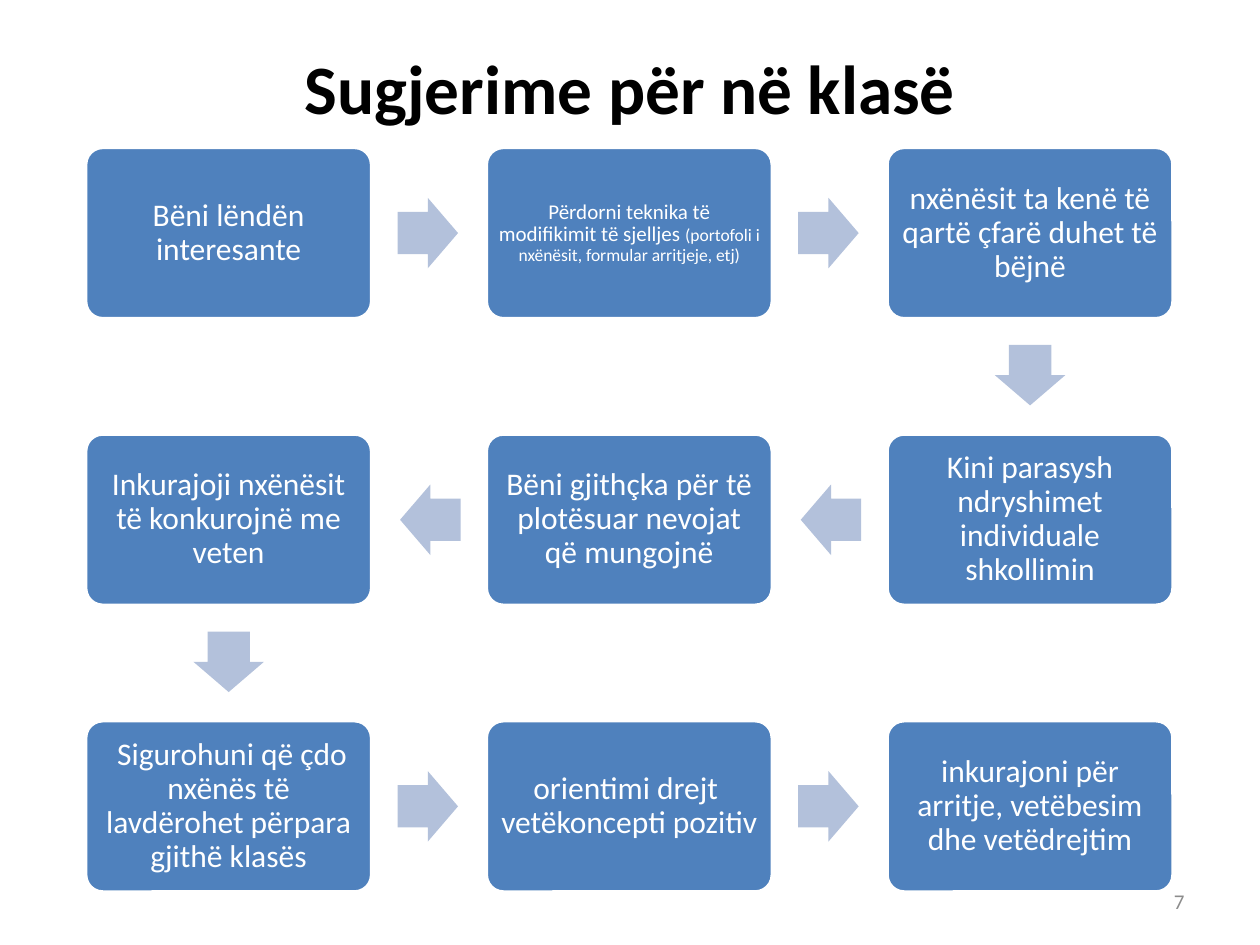
import pptx
import pptx.util
import pptx.dml.color
import pptx.enum.shapes
import pptx.enum.text

Inches = pptx.util.Inches
Pt = pptx.util.Pt
SHAPE = pptx.enum.shapes.MSO_SHAPE
ALIGN = pptx.enum.text.PP_ALIGN
FONT = "Calibri"
COLORS = {"box": "4F81BD", "arrow": "B3C1DB", "light": "FFFFFF",
          "title": "000000", "number": "8C8C8C"}

TITLE = "Sugjerime për në klasë"
NUMBER = "7"
STEPS = [
    [("Bëni lëndën interesante", 18)],
    [("Përdorni teknika të modifikimit të sjelljes ", 12),
     ("(portofoli i nxënësit, formular arritjeje, etj)", 10)],
    [("nxënësit ta kenë të qartë çfarë duhet të bëjnë", 18)],
    [("Kini parasysh ndryshimet individuale shkollimin", 18)],
    [("Bëni gjithçka për të plotësuar nevojat që mungojnë", 18)],
    [("Inkurajoji nxënësit të konkurojnë me veten", 18)],
    [(" Sigurohuni që çdo nxënës të lavdërohet përpara gjithë klasës", 18)],
    [("orientimi drejt  vetëkoncepti pozitiv", 18)],
    [("inkurajoni për arritje, vetëbesim dhe vetëdrejtim", 18)],
]

COLS = 3
LEFT, TOP = 0.68, 1.17
BOX_W, BOX_H = 2.27, 1.36
STEP_X, STEP_Y = 3.18, 2.275
ARROW_W, ARROW_H = 0.48, 0.56
ARROW_SHIFT = 0.01


def rgb(name):
    return pptx.dml.color.RGBColor.from_string(COLORS[name])


def write(sp, runs, color, align, bold=False):
    tf = sp.text_frame
    tf.word_wrap = True
    tf.vertical_anchor = pptx.enum.text.MSO_ANCHOR.MIDDLE
    p = tf.paragraphs[0]
    p.alignment = align
    for text, size in runs:
        r = p.add_run()
        r.text = text
        r.font.name = FONT
        r.font.size = Pt(size)
        r.font.bold = bold
        r.font.color.rgb = rgb(color)
    return p


def add_text(slide, box, text, size, color, align, bold=False):
    sp = slide.shapes.add_textbox(*map(Inches, box))
    write(sp, [(text, size)], color, align, bold)


def add_shape(slide, kind, cx, cy, w, h, fill, adjustments):
    sp = slide.shapes.add_shape(
        kind, Inches(cx - w / 2), Inches(cy - h / 2), Inches(w), Inches(h))
    sp.shadow.inherit = False
    sp.fill.solid()
    sp.fill.fore_color.rgb = rgb(fill)
    sp.line.fill.background()
    for i, value in enumerate(adjustments):
        sp.adjustments[i] = value
    return sp


def center(index):
    row, col = divmod(index, COLS)
    if row % 2:
        col = COLS - 1 - col
    return LEFT + col * STEP_X + BOX_W / 2, TOP + row * STEP_Y + BOX_H / 2


def add_step(slide, index, runs):
    sp = add_shape(slide, SHAPE.ROUNDED_RECTANGLE, *center(index),
                   BOX_W, BOX_H, "box", [0.1])
    sp.line.color.rgb = rgb("light")
    sp.line.width = Pt(2)
    tf = sp.text_frame
    inset = Inches(0.07 if runs[0][1] == 18 else 0.05)
    tf.margin_left = tf.margin_right = tf.margin_top = tf.margin_bottom = inset
    write(sp, runs, "light", ALIGN.CENTER).line_spacing = 0.9


def add_arrow(slide, index):
    (x1, y1), (x2, y2) = center(index), center(index + 1)
    dx, dy = (x2 > x1) - (x2 < x1), (y2 > y1) - (y2 < y1)
    sp = add_shape(slide, SHAPE.RIGHT_ARROW,
                   (x1 + x2) / 2 - dx * ARROW_SHIFT,
                   (y1 + y2) / 2 - dy * ARROW_SHIFT,
                   ARROW_W, ARROW_H, "arrow", [0.6, 0.5])
    sp.rotation = 90 if dy else 180 if dx < 0 else 0


def main():
    prs = pptx.Presentation()
    prs.slide_width, prs.slide_height = Inches(10), Inches(7.5)
    slide = prs.slides.add_slide(prs.slide_layouts[6])
    add_text(slide, (0.5, 0.3, 9, 0.78), TITLE, 39.6, "title", ALIGN.CENTER, True)
    for index, runs in enumerate(STEPS):
        add_step(slide, index, runs)
        if index < len(STEPS) - 1:
            add_arrow(slide, index)
    add_text(slide, (7.17, 6.95, 2.33, 0.4), NUMBER, 12, "number", ALIGN.RIGHT)
    prs.save("out.pptx")


if __name__ == "__main__":
    main()
